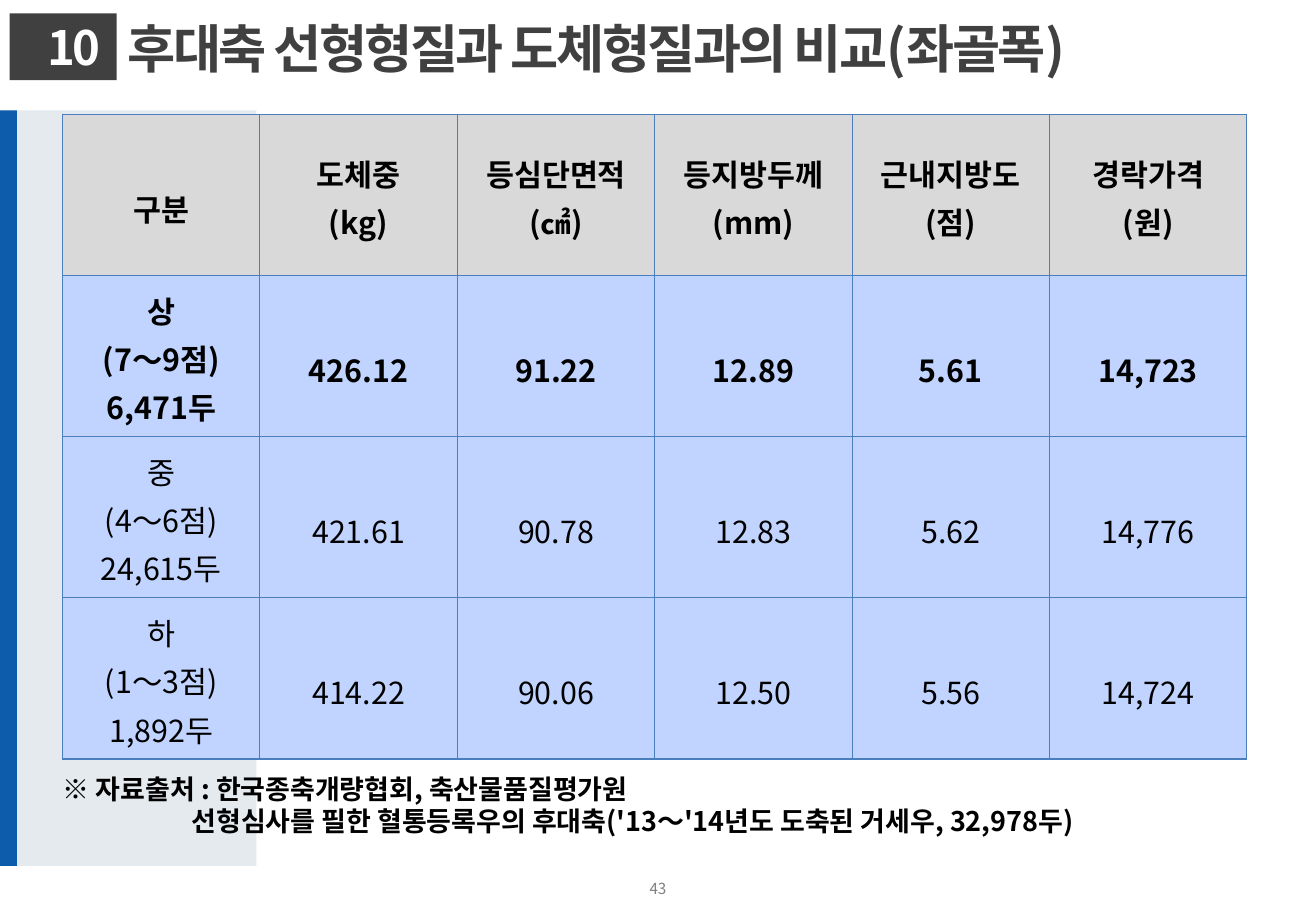
from dataclasses import dataclass

from lxml import etree
from pptx import Presentation
from pptx.dml.color import RGBColor
from pptx.enum.shapes import MSO_SHAPE
from pptx.enum.text import MSO_ANCHOR, PP_ALIGN
from pptx.oxml.ns import qn
from pptx.util import Inches, Pt

RECT = MSO_SHAPE.RECTANGLE
TOP, MIDDLE = MSO_ANCHOR.TOP, MSO_ANCHOR.MIDDLE
LEFT, CENTER = PP_ALIGN.LEFT, PP_ALIGN.CENTER
FONT = "Noto Sans CJK KR"
WIDE, HIGH = Inches(10.83), Inches(7.5)
INK = {"band": "E4EAED", "bar": "0D5CAB", "dark": "404040", "page": "808080",
       "text": "000000", "white": "FFFFFF", "head": "D9D9D9",
       "body": "C0D4FF", "edge": "4B7EBC"}


@dataclass
class Box:
    """Place on the slide, in percent of its width and height."""
    x: float
    y: float
    w: float
    h: float

    def emu(self) -> tuple[int, int, int, int]:
        return (round(WIDE * self.x / 100), round(HIGH * self.y / 100),
                round(WIDE * self.w / 100), round(HIGH * self.h / 100))


@dataclass
class Style:
    size: float
    ink: str = "text"
    bold: bool = True
    align: int = LEFT
    track: float = 0
    lead: float = 1


@dataclass
class Label:
    box: Box
    lines: list[str]
    style: Style
    pad: tuple[float, float, float, float] = (0.1, 0.05, 0.1, 0.05)
    anchor: int = MIDDLE
    fill: str = ""
    hang: float = 0


def color(name: str) -> RGBColor:
    return RGBColor.from_string(INK[name])


def write(frame, lines: list[str], style: Style, hang: float = 0) -> None:
    for i, line in enumerate(lines):
        para = frame.paragraphs[0] if i == 0 else frame.add_paragraph()
        para.alignment, para.line_spacing = style.align, style.lead
        if i and hang:
            para._p.get_or_add_pPr().set("marL", str(Inches(hang)))
        run = para.add_run()
        run.text = line
        font = run.font
        font.name, font.size, font.bold = FONT, Pt(style.size), style.bold
        font.color.rgb = color(style.ink)
        props = font._element
        if style.track:
            props.set("spc", str(round(style.track * 100)))
        etree.SubElement(props, qn("a:ea")).set("typeface", FONT)


def block(slide, box: Box, fill: str):
    shape = slide.shapes.add_shape(RECT, *box.emu())
    shape.shadow.inherit = False
    shape.fill.solid()
    shape.fill.fore_color.rgb = color(fill)
    shape.line.fill.background()
    return shape


def label(slide, item: Label) -> None:
    if item.fill:
        shape = block(slide, item.box, item.fill)
    else:
        shape = slide.shapes.add_textbox(*item.box.emu())
    frame = shape.text_frame
    frame.word_wrap, frame.vertical_anchor = True, item.anchor
    (frame.margin_left, frame.margin_top,
     frame.margin_right, frame.margin_bottom) = map(Inches, item.pad)
    write(frame, item.lines, item.style, item.hang)


def edges(cell) -> None:
    props = cell._tc.get_or_add_tcPr()
    for side in "LRTB":
        line = etree.SubElement(props, qn(f"a:ln{side}"), w=str(Pt(0.75)))
        fill = etree.SubElement(line, qn("a:solidFill"))
        etree.SubElement(fill, qn("a:srgbClr"), val=INK["edge"])


def grid(slide, box: Box, rows: list[list[str]]) -> None:
    count, span = len(rows), len(rows[0])
    left, top, wide, high = box.emu()
    table = slide.shapes.add_table(count, span, left, top, wide, high).table
    for col in table.columns:
        col.width = wide // span
    for r, row in enumerate(rows):
        table.rows[r].height = high // count
        for c, text in enumerate(row):
            cell = table.cell(r, c)
            edges(cell)
            cell.fill.solid()
            cell.fill.fore_color.rgb = color("body" if r else "head")
            cell.vertical_anchor = MIDDLE
            cell.margin_left = cell.margin_right = Inches(0.07)
            cell.margin_top = cell.margin_bottom = Inches(0.02)
            lines = text.split("\n")
            lead = 1.1 if len(lines) > 1 else 1.6
            write(cell.text_frame, lines,
                  Style(18, bold=r < 2, align=CENTER, lead=lead))


BANDS = [(Box(0, 12.13, 19.48, 82.93), "band"),
         (Box(0, 12.13, 1.29, 82.93), "bar")]
LABELS = [
    Label(Box(38.32, 96.27, 23.36, 2.53), ["43"],
          Style(9, "page", False, CENTER), pad=(0, 0, 0, 0)),
    Label(Box(0.74, 1.47, 8.13, 7.33), ["10"], Style(28, "white", track=-1.5),
          pad=(0.31, 0.04, 0.12, 0.04), fill="dark"),
    Label(Box(8.59, 0.67, 91.41, 9.07),
          ["후대축 선형형질과 도체형질과의 비교(좌골폭)"],
          Style(31, "dark", track=-1.5), pad=(0.12, 0.08, 0.08, 0.08)),
    Label(Box(3.88, 84.13, 86.52, 8.53),
          ["※ 자료출처 : 한국종축개량협회, 축산물품질평가원",
           "선형심사를 필한 혈통등록우의 후대축('13～'14년도 도축된 거세우, 32,978두)"],
          Style(16), anchor=TOP, hang=1.06),
]
ROWS = [
    ["구분", "도체중\n(kg)", "등심단면적\n(㎠)", "등지방두께\n(mm)",
     "근내지방도\n(점)", "경락가격\n(원)"],
    ["상\n(7～9점)\n6,471두", "426.12", "91.22", "12.89", "5.61", "14,723"],
    ["중\n(4～6점)\n24,615두", "421.61", "90.78", "12.83", "5.62", "14,776"],
    ["하\n(1～3점)\n1,892두", "414.22", "90.06", "12.50", "5.56", "14,724"],
]


def main() -> None:
    deck = Presentation()
    deck.slide_width, deck.slide_height = WIDE, HIGH
    slide = deck.slides.add_slide(deck.slide_layouts[6])
    # Side bands
    for box, fill in BANDS:
        block(slide, box, fill)
    # Page number, heading and source note
    for item in LABELS:
        label(slide, item)
    # Score table
    grid(slide, Box(4.75, 12.53, 90, 70.8), ROWS)
    deck.save("out.pptx")


if __name__ == "__main__":
    main()
